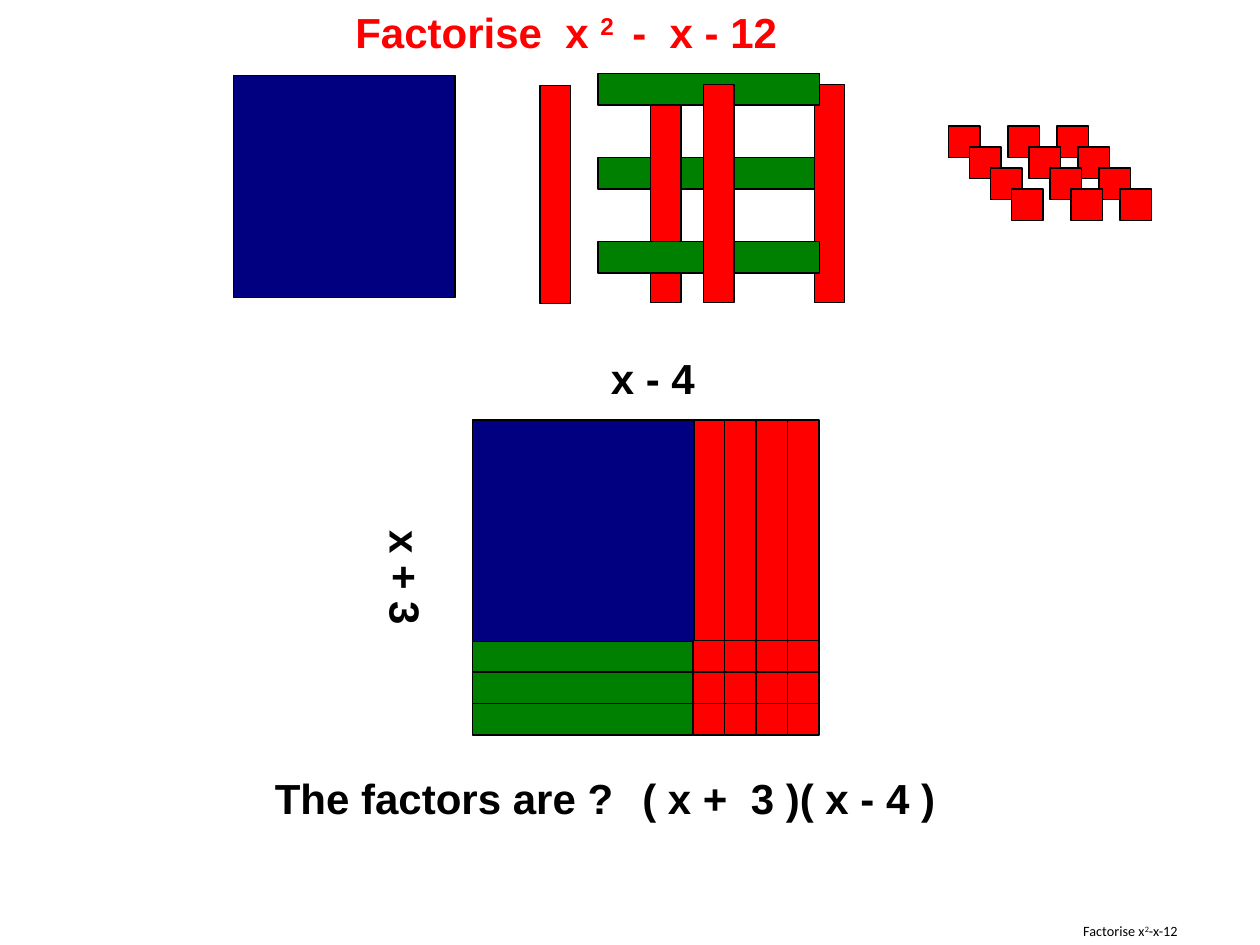
import pptx
import pptx.dml.color
import pptx.enum.shapes
import pptx.enum.text
import pptx.util

Pt = pptx.util.Pt
NAVY, RED, GREEN, BLACK = "000080", "FF0000", "008000", "000000"
SIDE, UNIT = 126.7, 18
STRIP_WIDTH, STRIP_HEIGHT = 17.4, 124.6


def colour(hex_value):
    return pptx.dml.color.RGBColor.from_string(hex_value)


def add_tile(slide, left, top, width, height, fill):
    tile = slide.shapes.add_shape(
        pptx.enum.shapes.MSO_SHAPE.RECTANGLE, Pt(left), Pt(top), Pt(width), Pt(height)
    )
    tile.shadow.inherit = False
    tile.fill.solid()
    tile.fill.fore_color.rgb = colour(fill)
    tile.line.color.rgb = colour(BLACK)
    tile.line.width = Pt(0.75)


def write(paragraph, pieces, font, size, fill, bold):
    paragraph.font.name = font
    paragraph.font.size = Pt(size)
    paragraph.font.bold = bold
    paragraph.font.color.rgb = colour(fill)
    for text, raised in pieces:
        run = paragraph.add_run()
        run.text = text
        if raised:
            run._r.get_or_add_rPr().set("baseline", "30000")


def add_label(slide, box, pieces, fill=BLACK, wrap=False, rotation=0):
    label = slide.shapes.add_textbox(*map(Pt, box))
    label.rotation = rotation
    label.text_frame.word_wrap = wrap
    label.text_frame.auto_size = pptx.enum.text.MSO_AUTO_SIZE.SHAPE_TO_FIT_TEXT
    write(label.text_frame.paragraphs[0], pieces, "Arial", 24, fill, True)


def place_title(slide, box):
    title = slide.shapes.title
    title.left, title.top, title.width, title.height = map(Pt, box)
    frame = title.text_frame
    frame.auto_size = pptx.enum.text.MSO_AUTO_SIZE.NONE
    frame.vertical_anchor = pptx.enum.text.MSO_ANCHOR.MIDDLE
    frame.paragraphs[0].alignment = pptx.enum.text.PP_ALIGN.CENTER
    pieces = [("Factorise x", False), ("2", True), ("-x-12 ", False)]
    write(frame.paragraphs[0], pieces, "Calibri", 8.1, BLACK, False)


def add_loose_strips(slide, left, top):
    def green_strip(row):
        add_tile(slide, left + 175.2, top + 48 * row, SIDE, UNIT, GREEN)

    def red_strip(offset, drop=6.3):
        add_tile(slide, left + offset, top + drop, STRIP_WIDTH, STRIP_HEIGHT, RED)

    green_strip(1)
    red_strip(298.8)
    red_strip(142, 7)
    red_strip(205.2)
    green_strip(0)
    green_strip(2)
    red_strip(235.4)
    add_tile(slide, left - 33.2, top + 1.2, SIDE, SIDE, NAVY)


def add_loose_units(slide, left, top):
    for row in range(4):
        for offset in (0, 34, 62):
            add_tile(slide, left + offset + 12 * row, top + 12 * row, UNIT, UNIT, RED)


def add_factor_grid(slide, left, top):
    right, bottom = left + 7 * UNIT, top + 7 * UNIT
    for row in range(3):
        add_tile(slide, left, bottom + UNIT * row, SIDE, UNIT, GREEN)
    for column in range(4):
        add_tile(slide, right + UNIT * column, top, UNIT, 7 * UNIT, RED)
    add_tile(slide, left, top, SIDE, SIDE, NAVY)
    for row in range(3):
        for column in range(4):
            add_tile(slide, right + UNIT * column, bottom + UNIT * row, UNIT, UNIT, RED)
    add_label(slide, (left + 72, top - 42, 62.6, 36), [("x - 4", False)])
    add_label(slide, (left - 72, top + 72, 68.4, 36), [("x + 3", False)], rotation=90)


def add_answer(slide, left, top):
    add_label(slide, (left, top, 208, 36), [("The factors are ?", False)])
    add_label(slide, (left + 210, top, 210, 36), [("( x +  3 )( x - 4 )", False)], wrap=True)


def main():
    deck = pptx.Presentation()
    deck.slide_width, deck.slide_height = Pt(720), Pt(540)
    slide = deck.slides.add_slide(deck.slide_layouts[5])
    place_title(slide, (598.3, 524.2, 97.2, 15.8))
    question = [("Factorise  x ", False), ("2 ", True), (" -  x - 12", False)]
    add_label(slide, (196, 0, 257, 36), question, fill=RED)
    add_loose_strips(slide, 166.6, 42)
    add_loose_units(slide, 542, 72)
    add_factor_grid(slide, 270, 240)
    add_answer(slide, 150, 438)
    deck.save("out.pptx")


if __name__ == "__main__":
    main()
